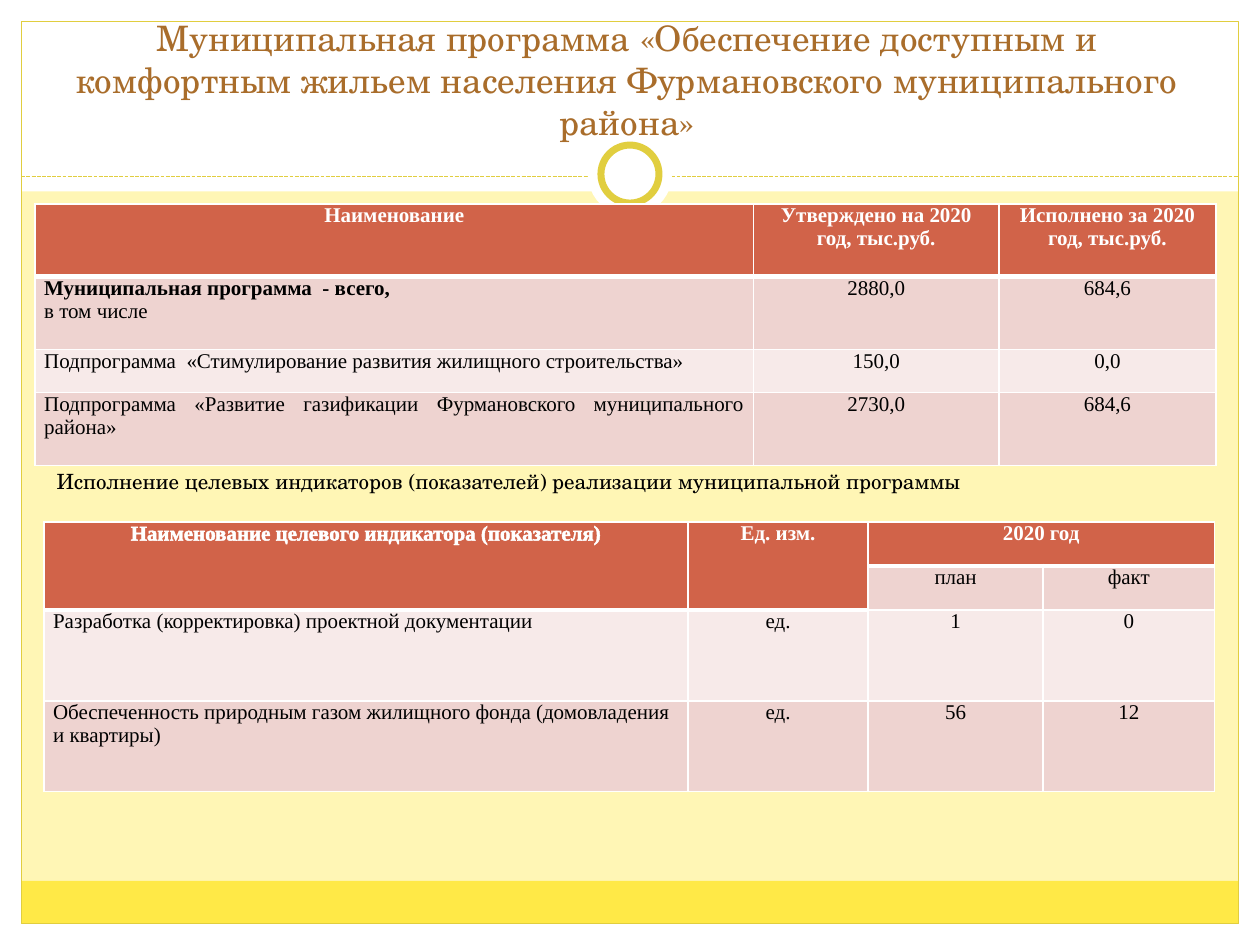
import lxml.etree
import pptx
import pptx.dml.color
import pptx.enum.dml
import pptx.enum.shapes
import pptx.enum.text
import pptx.oxml.ns
import pptx.util

Cm = pptx.util.Cm
Pt = pptx.util.Pt
RGB = pptx.dml.color.RGBColor
ALIGN = pptx.enum.text.PP_ALIGN
KIND = pptx.enum.shapes.MSO_SHAPE
qn = pptx.oxml.ns.qn

WHITE = RGB(0xFF, 0xFF, 0xFF)
BLACK = RGB(0, 0, 0)
CREAM = RGB(0xFF, 0xF6, 0xB5)
YELLOW = RGB(0xFF, 0xE9, 0x47)
GOLD = RGB(0xE1, 0xCE, 0x3F)
BROWN = RGB(0xA9, 0x6D, 0x2B)
RED = RGB(0xD1, 0x63, 0x49)
PINK = RGB(0xEE, 0xD3, 0xD0)
PALE = RGB(0xF7, 0xEA, 0xE9)
SCHOOL = "TeX Gyre Schola"
TIMES = "Times New Roman"


def add_form(slide, kind, box, fill=None, line=None, width=0.75):
    form = slide.shapes.add_shape(kind, *map(Cm, box))
    form.shadow.inherit = False
    if fill is None:
        form.fill.background()
    else:
        form.fill.solid()
        form.fill.fore_color.rgb = fill
    if line is None:
        form.line.fill.background()
    else:
        form.line.color.rgb = line
        form.line.width = Pt(width)


def add_run(para, text, size, face, color, bold=False):
    run = para.add_run()
    run.text = text
    run.font.size = Pt(size)
    run.font.name = face
    run.font.bold = bold
    run.font.color.rgb = color
    return run


def add_stroke(parent, tag, width, color):
    line = lxml.etree.SubElement(parent, qn(tag), w=str(Pt(width)))
    fill = lxml.etree.SubElement(line, qn("a:solidFill"))
    lxml.etree.SubElement(fill, qn("a:srgbClr"), val=str(color))
    return line


def draw_frame(slide, box):
    left, top, width, height = box
    edge, head, foot = 0.43, 3.86, 0.86
    inner = width - 2 * edge
    base = height - edge
    for part in (
        (left, top + base, width, edge),
        (left, top, width, head),
        (left, top, edge, height),
        (left + width - edge, top, edge, height),
    ):
        add_form(slide, KIND.RECTANGLE, part, WHITE)
    add_form(slide, KIND.RECTANGLE,
             (left + edge, top + base - foot, inner, foot), YELLOW)
    add_form(slide, KIND.RECTANGLE,
             (left + edge, top + edge, inner, height - 2 * edge), line=GOLD)

    level = top + 3.56
    rule = slide.shapes.add_connector(
        pptx.enum.shapes.MSO_CONNECTOR.STRAIGHT,
        Cm(left + edge), Cm(level), Cm(left + width - edge), Cm(level))
    rule.line.color.rgb = GOLD
    rule.line.width = Pt(0.75)
    rule.line.dash_style = pptx.enum.dml.MSO_LINE.SQUARE_DOT
    lxml.etree.SubElement(rule._element.spPr, qn("a:effectLst"))

    center, middle = left + width / 2, top + 3.51
    for size, line in ((1.7, None), (1.17, GOLD)):
        ring = (center - size / 2, middle - size / 2, size, size)
        add_form(slide, KIND.OVAL, ring, WHITE, line, 4)


def draw_text(slide, box, text, size, color, align, anchor, before=0):
    frame = slide.shapes.add_textbox(*map(Cm, box)).text_frame
    frame.word_wrap = True
    frame.vertical_anchor = anchor
    para = frame.paragraphs[0]
    para.alignment = align
    para.space_before = Pt(before)
    add_run(para, text, size, SCHOOL, color)


def fill_cell(cell, lines, fill, align, row):
    cell.margin_left = cell.margin_right = Cm(0.18)
    cell.margin_top = cell.margin_bottom = 0
    props = cell._tc.get_or_add_tcPr()
    add_stroke(props, "a:lnL", 1, WHITE)
    add_stroke(props, "a:lnR", 1, WHITE)
    if row == 0:
        add_stroke(props, "a:lnT", 1, WHITE)
    add_stroke(props, "a:lnB", 1 if row else 3, WHITE)
    cell.fill.solid()
    cell.fill.fore_color.rgb = fill
    frame = cell.text_frame
    for index, (text, bold) in enumerate(lines):
        para = frame.add_paragraph() if index else frame.paragraphs[0]
        para.alignment = align
        add_run(para, text, 12, TIMES, BLACK if row else WHITE, bold)


def draw_table(slide, spot, cols, rows, data, align, spans=()):
    table = slide.shapes.add_table(
        len(rows), len(cols), *map(Cm, (*spot, sum(cols), sum(rows)))).table
    table.first_row = table.horz_banding = False
    for column, width in zip(table.columns, cols):
        column.width = Cm(width)
    for line, height in zip(table.rows, rows):
        line.height = Cm(height)
    for start, end in spans:
        table.cell(*start).merge(table.cell(*end))
    for row, values in enumerate(data):
        for col, value in enumerate(values):
            cell = table.cell(row, col)
            lines = [(value, row == 0)] if isinstance(value, str) else value
            side = align if row and col == 0 else ALIGN.CENTER
            fill = (PALE, PINK)[row % 2] if row else RED
            if cell.is_spanned:
                fill = RED
            fill_cell(cell, lines, fill, side, row)
    return table


def draw_budget(slide, spot):
    total = [("Муниципальная программа  - всего,", True), ("в том числе", False)]
    data = [
        ("Наименование", "Утверждено на 2020 год, тыс.руб.",
         "Исполнено за 2020 год, тыс.руб."),
        (total, "2880,0", "684,6"),
        ("Подпрограмма  «Стимулирование развития жилищного строительства»",
         "150,0", "0,0"),
        ("Подпрограмма «Развитие газификации Фурмановского муниципального района»",
         "2730,0", "684,6"),
    ]
    draw_table(slide, spot, (14.48, 4.95, 4.37), (1.47, 1.47, 0.86, 1.47),
               data, ALIGN.JUSTIFY)


def draw_goals(slide, spot):
    data = [
        ("Наименование целевого индикатора (показателя)", "Ед. изм.",
         "2020 год", []),
        ([], [], "план", "факт"),
        ("Разработка (корректировка) проектной документации", "ед.", "1", "0"),
        ("Обеспеченность природным газом жилищного фонда (домовладения и квартиры)",
         "ед.", "56", "12"),
    ]
    spans = (((0, 0), (1, 0)), ((0, 1), (1, 1)), ((0, 2), (0, 3)))
    table = draw_table(slide, spot, (12.98, 3.63, 3.53, 3.45),
                       (0.89, 0.89, 1.83, 1.83), data, ALIGN.LEFT, spans)
    props = table.cell(0, 0).text_frame.paragraphs[0].runs[0]._r.get_or_add_rPr()
    props.insert(0, add_stroke(props, "a:ln", 0.75, WHITE))


def main():
    deck = pptx.Presentation()
    deck.slide_width, deck.slide_height = Cm(25.4), Cm(19.05)
    slide = deck.slides.add_slide(deck.slide_layouts[6])
    slide.background.fill.solid()
    slide.background.fill.fore_color.rgb = CREAM
    anchor = pptx.enum.text.MSO_ANCHOR
    draw_frame(slide, (0, 0, 25.4, 19.05))
    draw_text(slide, (0.79, 0.74, 23.7, 2.26),
              "Муниципальная программа «Обеспечение доступным и комфортным "
              "жильем населения Фурмановского муниципального района»",
              20, BROWN, ALIGN.CENTER, anchor.BOTTOM)
    draw_budget(slide, (0.71, 4.11))
    draw_text(slide, (0.89, 9.32, 23.62, 0.99),
              "Исполнение целевых индикаторов (показателей) реализации "
              "муниципальной программы",
              12, BLACK, ALIGN.LEFT, anchor.TOP, 2.4)
    draw_goals(slide, (0.89, 10.52))
    deck.save("out.pptx")


if __name__ == "__main__":
    main()
